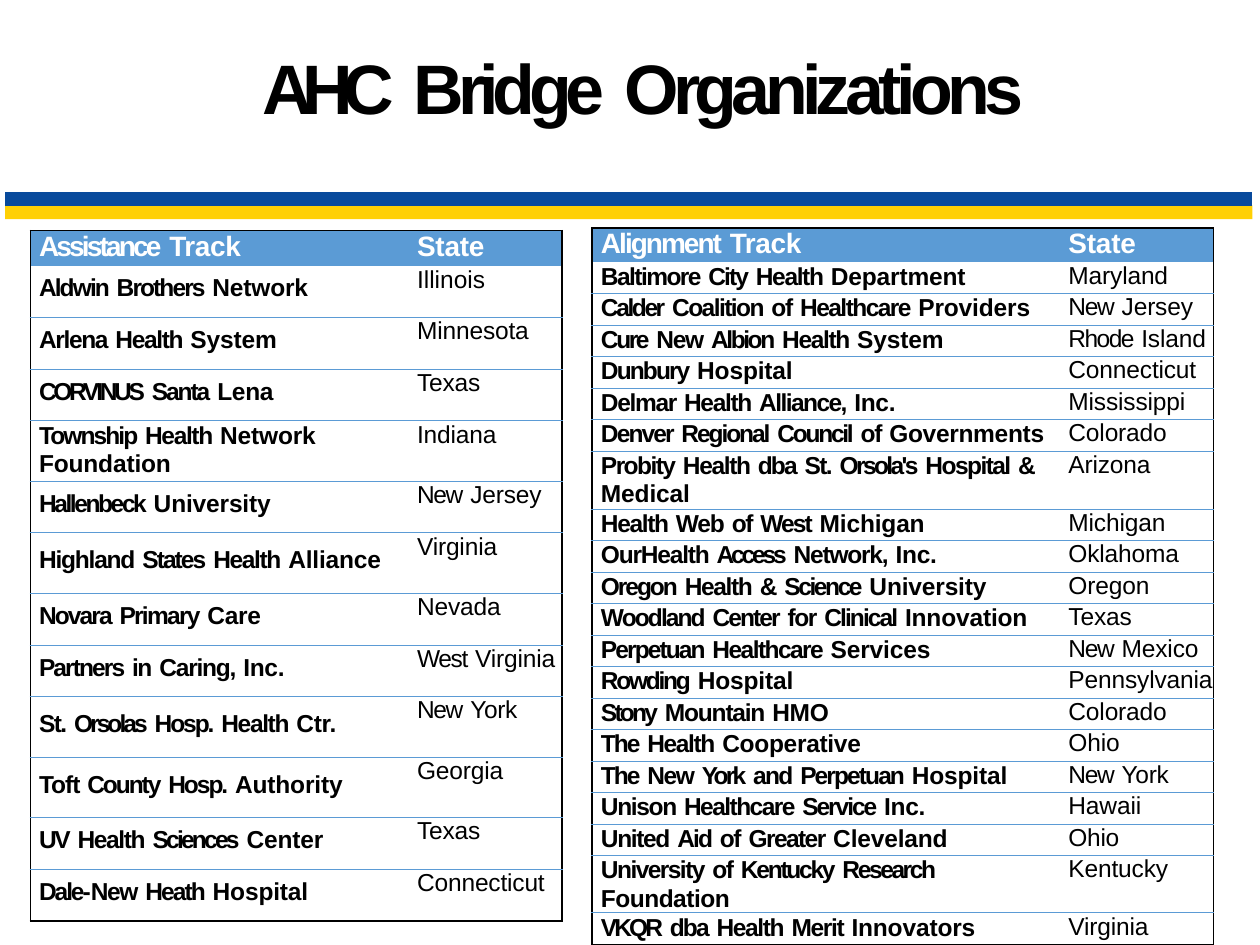
from lxml import etree
from pptx import Presentation
from pptx.dml.color import RGBColor
from pptx.enum.shapes import MSO_CONNECTOR, MSO_SHAPE
from pptx.enum.text import MSO_ANCHOR, PP_ALIGN
from pptx.oxml.ns import qn
from pptx.util import Inches, Pt

STRAIGHT, RECTANGLE = MSO_CONNECTOR.STRAIGHT, MSO_SHAPE.RECTANGLE
TOP, LEFT = MSO_ANCHOR.TOP, PP_ALIGN.LEFT
NO_STYLE = "{2D5ABB26-0587-4C30-8999-92F81FD0307C}"
COLORS = {"black": "000000", "white": "FFFFFF", "header": "5B9BD5",
          "blue": "084A9C", "yellow": "FFD004"}
HEAD = {"size": Pt(16), "bold": True, "color": "white"}
NAME = {"size": Pt(14), "bold": True, "color": "black"}
STATE = {"size": Pt(14), "bold": False, "color": "black"}
TITLE = {"size": Pt(40), "bold": True, "color": "black"}

# In the texts below | separates runs, and ^n tightens a run by n tenths of a point.
ASSISTANCE = [
    ("Assistance ^16|Track^2", "State"),
    ("Aldwin ^11|Brothers ^11|Network", "Illinois^0"),
    ("Arlena ^8|Health ^8|System", "Minnesota"),
    ("CORVINUS ^19|Santa ^12|Lena^2", "Texas"),
    ("Township ^11|Health ^8|Network\nFoundation", "Indiana"),
    ("Hallenbeck ^14|University", "New ^8|Jersey"),
    ("Highland ^7|States ^11|Health ^8|Alliance", "Virginia"),
    ("Novara ^11|Primary ^10|Care^2", "Nevada"),
    ("Partners ^11|in ^8|Caring, ^7|Inc.^2", "West ^8|Virginia"),
    ("St. ^9|Orsolas ^17|Hosp. ^12|Health ^8|Ctr.^2", "New ^8|York^2"),
    ("Toft ^6|County ^12|Hosp. ^12|Authority", "Georgia"),
    ("UV ^14|Health ^8|Sciences ^16|Center", "Texas"),
    ("Dale-^12|New ^8|Heath ^11|Hospital", "Connecticut"),
]
ALIGNMENT = [
    ("Alignment ^11|Track^2", "State"),
    ("Baltimore ^9|City ^11|Health ^8|Department", "Maryland"),
    ("Calder ^14|Coalition ^9|of ^7|Healthcare ^9|Providers", "New ^8|Jersey"),
    ("Cure ^14|New ^8|Albion ^14|Health ^8|System", "Rhode ^9|Island"),
    ("Dunbury ^11|Hospital", "Connecticut"),
    ("Delmar ^8|Health ^8|Alliance, ^9|Inc.^2", "Mississippi"),
    ("Denver ^11|Regional ^12|Council ^13|of ^8|Governments^2", "Colorado"),
    ("Probity ^9|Health ^8|dba ^11|St. ^9|Orsola's ^15|Hospital ^9|&^5\nMedical", "Arizona"),
    ("Health ^8|Web ^7|of ^8|West ^11|Michigan", "Michigan"),
    ("OurHealth ^7|Access ^18|Network, ^7|Inc.^2", "Oklahoma"),
    ("Oregon ^12|Health ^8|& ^4|Science ^14|University", "Oregon"),
    ("Woodland ^11|Center ^11|for ^8|Clinical ^11|Innovation", "Texas"),
    ("Perpetuan ^11|Healthcare ^9|Services", "New ^8|Mexico"),
    ("Rowding ^13|Hospital", "Pennsylvania"),
    ("Stony ^16|Mountain ^7|HMO^2", "Colorado"),
    ("The ^12|Health ^8|Cooperative^2", "Ohio"),
    ("The ^12|New ^8|York ^16|and ^10|Perpetuan ^11|Hospital", "New ^8|York^2"),
    ("Unison ^8|Healthcare ^9|Service ^12|Inc.^2", "Hawaii"),
    ("United ^8|Aid ^11|of ^8|Greater ^9|Cleveland", "Ohio^2"),
    ("University ^9|of ^8|Kentucky ^13|Research ^14|Foundation^3", "Kentucky"),
    ("VKQR ^17|dba ^11|Health ^8|Merit ^8|Innovators", "Virginia"),
]
TABLES = [
    {"rows": ASSISTANCE, "at": (0.24, 1.83), "cols": (2.87, 1.35), "indent": (0.07, 0.2),
     "head": 0.28, "row": 0.41, "tall": {4: 0.48, 6: 0.48, 9: 0.48, 10: 0.48},
     "top": 0.07, "tall_top": 0.11, "leading": None},
    {"rows": ALIGNMENT, "at": (4.7, 1.81), "cols": (3.7, 1.23), "indent": (0.07, 0.08),
     "head": 0.27, "row": 0.25, "tall": {7: 0.46, 19: 0.45},
     "top": 0, "tall_top": 0, "leading": 16.4},
]


def write(tf, text, style, leading=None):
    """Fill a frame from marked-up text; the space that ends a run is not tightened."""
    for i, line in enumerate(text.split("\n")):
        p = tf.add_paragraph() if i else tf.paragraphs[0]
        p.alignment = LEFT
        if leading:
            p.line_spacing = Pt(leading)
        for part in line.split("|"):
            words, _, tight = part.partition("^")
            word = words.rstrip()
            pieces = [(word, int(tight or 1))]
            if word != words:
                pieces.append((" ", 0))
            for piece, tenths in pieces:
                r = p.add_run()
                r.text = piece
                r.font.name = "Arial"
                r.font.size, r.font.bold = style["size"], style["bold"]
                r.font.color.rgb = RGBColor.from_string(COLORS[style["color"]])
                r.font._element.set("spc", str(-10 * tenths))


def add_border(cell, side, color, width):
    ln = etree.SubElement(cell._tc.get_or_add_tcPr(), qn("a:ln" + side), w=str(Pt(width)))
    fill = etree.SubElement(ln, qn("a:solidFill"))
    etree.SubElement(fill, qn("a:srgbClr"), val=COLORS[color])


prs = Presentation()
prs.slide_width, prs.slide_height = Inches(10), Inches(7.5)
s = prs.slides.add_slide(prs.slide_layouts[5])

title = s.shapes.title
title.left, title.top, title.width, title.height = map(Inches, (0.54, -0.03, 8.92, 1.52))
tf = title.text_frame
tf.vertical_anchor = TOP
tf.margin_left, tf.margin_top = Inches(1.54), Inches(0.38)
tf.margin_right = tf.margin_bottom = 0
write(tf, "AHC ^55|Bridge ^35|Organizations^32", TITLE)

band = s.shapes.add_shape(RECTANGLE, *map(Inches, (0.04, 1.63, 9.9, 0.11)))
band.shadow.inherit = False
band.fill.solid()
band.fill.fore_color.rgb = RGBColor.from_string(COLORS["yellow"])
band.line.fill.background()

rule = s.shapes.add_connector(STRAIGHT, *map(Inches, (0.04, 1.58, 9.94, 1.58)))
rule.line.width = Pt(8)
rule.line.color.rgb = RGBColor.from_string(COLORS["blue"])
etree.SubElement(rule._element.spPr, qn("a:effectLst"))

for t in TABLES:
    rows = t["rows"]
    last = len(rows) - 1
    heights = [t["head"]] + [t["tall"].get(i, t["row"]) for i in range(1, last + 1)]
    frame = s.shapes.add_table(len(rows), 2, *map(Inches, (*t["at"], sum(t["cols"]), sum(heights))))
    table = frame.table
    table.first_row = table.horz_banding = False
    table._tbl.tblPr.find(qn("a:tableStyleId")).text = NO_STYLE
    for column, width in zip(table.columns, t["cols"]):
        column.width = Inches(width)
    for i, texts in enumerate(rows):
        table.rows[i].height = Inches(heights[i])
        for j, text in enumerate(texts):
            cell = table.cell(i, j)
            cell.vertical_anchor = TOP
            cell.margin_left = Inches(t["indent"][j])
            cell.margin_top = cell.margin_right = cell.margin_bottom = 0
            add_border(cell, "R" if j else "L", "black", 1)
            if i == 0:
                add_border(cell, "T", "black", 1)
                cell.fill.solid()
                cell.fill.fore_color.rgb = RGBColor.from_string(COLORS["header"])
                write(cell.text_frame, text, HEAD, 18.2)
                continue
            if i > 1:
                add_border(cell, "T", "header", 0.5)
            if i == last:
                add_border(cell, "B", "black", 1)
            else:
                add_border(cell, "B", "header", 0.5)
            cell.fill.background()
            if j:
                write(cell.text_frame, text, STATE, 15.8)
            else:
                two_lines = "\n" in text
                if not two_lines:
                    cell.margin_top = Inches(t["tall_top"] if i in t["tall"] else t["top"])
                write(cell.text_frame, text, NAME, 16.3 if two_lines else t["leading"])

prs.save("out.pptx")
